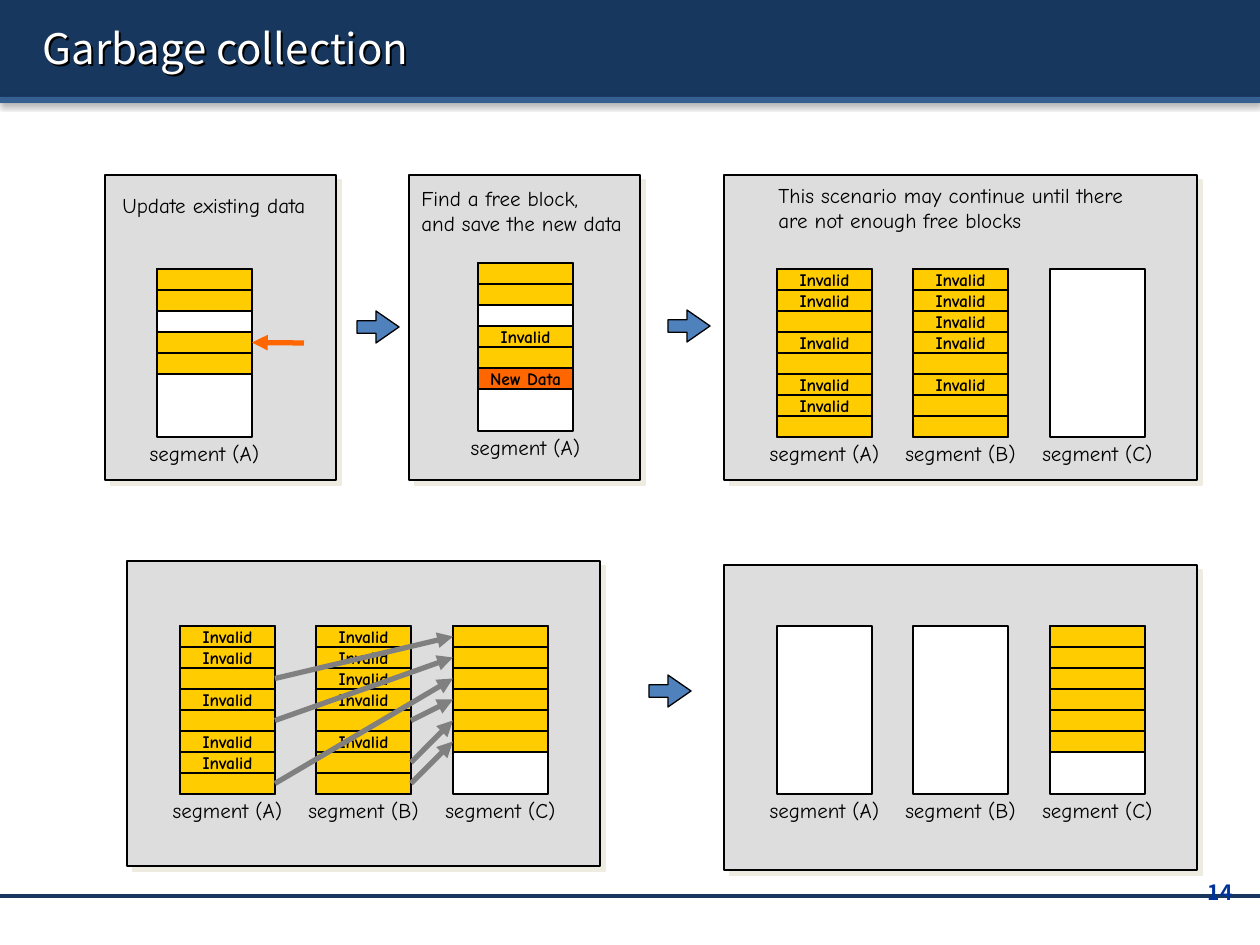
import pptx
import pptx.util
import pptx.oxml
import pptx.oxml.ns
import pptx.dml.color
import pptx.enum.shapes
import pptx.enum.text
import lxml.etree

RGB = pptx.dml.color.RGBColor
Pt = pptx.util.Pt
SHAPE = pptx.enum.shapes.MSO_SHAPE
ALIGN = pptx.enum.text.PP_ALIGN
ANCHOR = pptx.enum.text.MSO_ANCHOR
qn = pptx.oxml.ns.qn

PX = 914400 / 126
NAVY, STEEL = RGB(0x17, 0x37, 0x5E), RGB(0x37, 0x60, 0x92)
WHITE, BLACK = RGB(0xFF, 0xFF, 0xFF), RGB(0, 0, 0)
PANEL, GREY = RGB(0xDD, 0xDD, 0xDD), RGB(0x80, 0x80, 0x80)
YELLOW, ORANGE = RGB(0xFF, 0xCC, 0x00), RGB(0xFF, 0x66, 0x00)
BLUE, NUMBER_BLUE = RGB(0x4F, 0x81, 0xBD), RGB(0x00, 0x33, 0x99)
BODY_FONT, HEAD_FONT = "Comic Neue", "Noto Sans CJK KR"

SHADOW = (
    '<a:effectLst xmlns:a="http://schemas.openxmlformats.org/drawingml/2006/main">'
    '<a:outerShdw blurRad="{}" dist="{}" dir="{}" algn="tl" rotWithShape="0">'
    '<a:srgbClr val="{}"><a:alpha val="{}"/></a:srgbClr></a:outerShdw></a:effectLst>'
)
BAR_SHADOW = SHADOW.format(39370, 20320, 5400000, "000000", 38000)
PANEL_SHADOW = SHADOW.format(0, 53340, 2700000, "EEECE1", 100000)
TITLE_SHADOW = SHADOW.format(0, 20320, 2700000, "000000", 100000)

prs = pptx.Presentation()
prs.slide_width, prs.slide_height = round(1260 * PX), round(945 * PX)
s = prs.slides.add_slide(prs.slide_layouts[5])


def box(rect, fill, line=None, shadow=None, kind=SHAPE.RECTANGLE):
    """Add a filled shape at rect (px), with an optional black line in points."""
    sp = s.shapes.add_shape(kind, *[round(v * PX) for v in rect])
    sp.fill.solid()
    sp.fill.fore_color.rgb = fill
    if line:
        sp.line.color.rgb = BLACK
        sp.line.width = Pt(line)
    else:
        sp.line.fill.background()
    if shadow:
        sp.element.spPr.append(pptx.oxml.parse_xml(shadow))
    else:
        sp.shadow.inherit = False
    return sp


def write(sp, lines, size, align=ALIGN.CENTER, spacing=None, bold=False,
          font=BODY_FONT, color=BLACK, anchor=ANCHOR.MIDDLE):
    tf = sp.text_frame
    tf.word_wrap = True
    tf.vertical_anchor = anchor
    for i, line in enumerate(lines):
        p = tf.add_paragraph() if i else tf.paragraphs[0]
        p.alignment = align
        p.line_spacing = spacing
        if i:
            p.space_before = Pt(size / 2)
        r = p.add_run()
        r.text = line
        r.font.size = Pt(size)
        r.font.name = font
        r.font.bold = bold
        r.font.color.rgb = color


# Header bars, with the title in front of them
box((0, 0, 1260, 97), NAVY, shadow=BAR_SHADOW)
box((0, 97, 1260, 6), STEEL, shadow=BAR_SHADOW)
title = s.shapes.title
title.left, title.top, title.width, title.height = [round(v * PX) for v in (30, 8, 1211, 80)]
title.element.getparent().append(title.element)
write(title, ["Garbage collection"], 24, ALIGN.LEFT, font=HEAD_FONT, color=WHITE)
title.element.spPr.append(pptx.oxml.parse_xml(TITLE_SHADOW))

# Steps: panel, caption box and lines, first segment place, rows of each segment
# (d data, i invalid, n new data, - free)
steps = [
    ((105, 175, 231, 305), (110, 182, 225, 53), ["Update existing data"],
     (157, 269), ["dd-dd---"]),
    ((409, 175, 231, 305), (409, 188, 240, 53),
     ["Find a free block,", "and save the new data"], (478, 263), ["dd-idn--"]),
    ((724, 175, 473, 305), (766, 185, 400, 53),
     ["This scenario may continue until there", "are not enough free blocks"],
     (777, 269), ["iididiid", "iiiididd", "--------"]),
    ((127, 561, 473, 305), None, [], (180, 626), ["iididiid", "iiiididd", "dddddd--"]),
    ((724, 565, 473, 305), None, [], (777, 626), ["--------", "--------", "dddddd--"]),
]
CELL = {"d": (YELLOW, ""), "i": (YELLOW, "Invalid"), "n": (ORANGE, "New Data")}
SEG_W, ROW_H, SEG_PITCH = 95, 21, 136.5
LABEL_W, LABEL_H = 135, 32
cells = {}
for step, (panel, caption_rect, caption, (left, top), segments) in enumerate(steps):
    box(panel, PANEL, 0.75, PANEL_SHADOW)
    if caption:
        tb = s.shapes.add_textbox(*[round(v * PX) for v in caption_rect])
        write(tb, caption, 12, ALIGN.LEFT, 0.6)
    for name, rows, i in zip("ABC", segments, range(3)):
        x = left + round(i * SEG_PITCH)
        bottom = top + ROW_H * len(rows)
        box((x, top, SEG_W, bottom - top), WHITE, 1)
        for row, state in enumerate(rows):
            if state == "-":
                continue
            fill, label = CELL[state]
            sp = box((x, top + row * ROW_H, SEG_W, ROW_H), fill, 1)
            if label:
                sp.text_frame.margin_left = sp.text_frame.margin_right = 0
                write(sp, [label], 10, bold=True)
            cells[step, name, row] = sp
        label_x = x - (LABEL_W - SEG_W) // 2
        tb = s.shapes.add_textbox(
            *[round(v * PX) for v in (label_x, bottom, LABEL_W, LABEL_H)])
        tb.text_frame.margin_left = tb.text_frame.margin_right = 0
        write(tb, [f"segment ({name})"], 12)

# Lines: start, end, colour, width, cell left from, cell pointed at
lines = [
    ((0, 896), (1260, 896), NAVY, 2, None, None),
    ((304, 343), (252, 343), ORANGE, 3, None, (0, "A", 3)),
]
moves = [("B", 4), ("B", 6), ("B", 7), ("A", 2), ("A", 4), ("A", 7)]
for (name, row), target in zip(moves, (3, 4, 5, 0, 1, 2)):
    lines.append(((0, 0), (0, 0), GREY, 3, (3, name, row), (3, "C", target)))
for start, end, color, width, source, target in lines:
    c = s.shapes.add_connector(pptx.enum.shapes.MSO_CONNECTOR.STRAIGHT,
                               *[round(v * PX) for v in (*start, *end)])
    if source:
        c.begin_connect(cells[source], 3)
    c.line.color.rgb = color
    c.line.width = Pt(width)
    if target:
        # an update arrow points at the right side, a move at the left side
        c.end_connect(cells[target], 1 if source else 3)
        lxml.etree.SubElement(c.element.spPr.find(qn("a:ln")), qn("a:tailEnd"),
                              type="triangle")
    lxml.etree.SubElement(c.element.spPr, qn("a:effectLst"))

# Block arrows between the steps
for x, y in ((357, 311), (668, 310), (649, 675)):
    arrow = box((x, y, 42, 32), BLUE, 0.75, kind=SHAPE.RIGHT_ARROW)
    arrow.adjustments[0], arrow.adjustments[1] = 0.39, 0.72

number = s.shapes.add_textbox(*[round(v * PX) for v in (972, 873, 273, 66)])
write(number, ["14"], 12, ALIGN.RIGHT, bold=True, font=HEAD_FONT,
      color=NUMBER_BLUE, anchor=ANCHOR.TOP)

prs.save("out.pptx")
